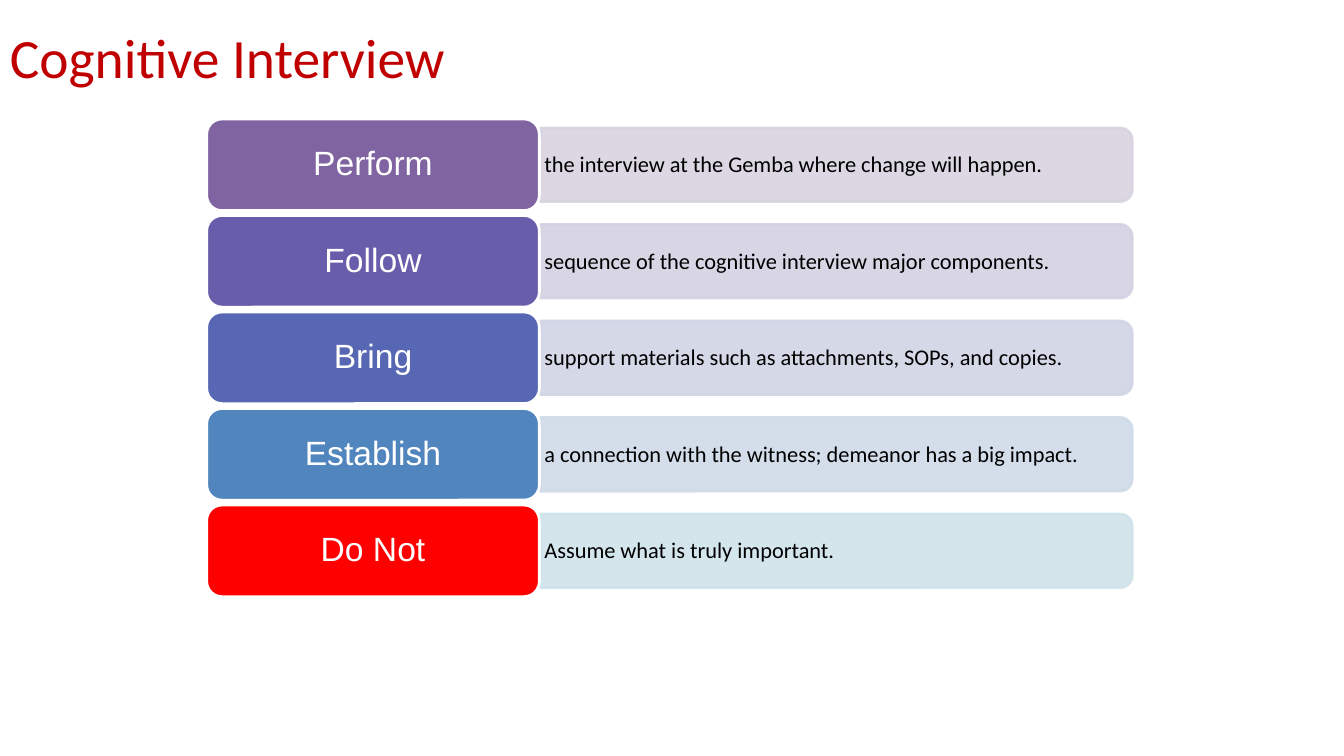
from lxml.etree import SubElement
from pptx import Presentation
from pptx.dml.color import RGBColor
from pptx.enum.shapes import MSO_SHAPE
from pptx.enum.text import MSO_ANCHOR, PP_ALIGN
from pptx.oxml.ns import qn
from pptx.util import Inches, Pt

COLORS = {
    "title": "C00000", "text": "000000", "white": "FFFFFF",
    "purple": "8064A2", "violet": "685DAB", "indigo": "5767B4",
    "blue": "5185BD", "red": "FF0000",
    "mauve": "D8D3E0", "lilac": "D4D2E3", "lavender": "D1D4E5",
    "mist": "D0DBE8", "aqua": "D0E3EA",
}

ROWS = [
    ("Perform", "the interview at the Gemba where change will happen.", "purple", "mauve"),
    ("Follow", "sequence of the cognitive interview major components.", "violet", "lilac"),
    ("Bring", "support materials such as attachments, SOPs, and copies.", "indigo", "lavender"),
    ("Establish", "a connection with the witness; demeanor has a big impact.", "blue", "mist"),
    ("Do Not", "Assume what is truly important.", "red", "aqua"),
]


class Board:
    def __init__(self, slide):
        self.slide = slide

    def color(self, name):
        return RGBColor.from_string(COLORS[name])

    def letter(self, shape, text, size, font, color, align=PP_ALIGN.LEFT):
        frame = shape.text_frame
        frame.word_wrap = True
        frame.vertical_anchor = MSO_ANCHOR.MIDDLE
        frame.text = text
        line = frame.paragraphs[0]
        line.alignment = align
        line.line_spacing = 0.9
        run = line.runs[0].font
        run.size = Pt(size)
        run.name = font
        run.color.rgb = self.color(color)

    def label(self, left, top, width, height, text, size, color, pad=(0.1, 0.05)):
        box = self.slide.shapes.add_textbox(
            Inches(left), Inches(top), Inches(width), Inches(height))
        frame = box.text_frame
        frame.margin_left = frame.margin_right = Inches(pad[0])
        frame.margin_top = frame.margin_bottom = Inches(pad[1])
        self.letter(box, text, size, "Calibri", color)

    def shape(self, kind, left, top, width, height, fill, edge):
        item = self.slide.shapes.add_shape(
            kind, Inches(left), Inches(top), Inches(width), Inches(height))
        item.shadow.inherit = False
        item.fill.solid()
        item.fill.fore_color.rgb = self.color(fill)
        item.line.color.rgb = self.color(edge)
        item.line.width = Pt(2)
        return item

    def bar(self, left, top, width, height, fill):
        shift = (width - height) / 2
        item = self.shape(MSO_SHAPE.ROUND_2_SAME_RECTANGLE,
                          left + shift, top - shift, height, width, fill, fill)
        item.rotation = 90
        for tint in item._element.spPr.iter(qn("a:srgbClr")):
            SubElement(tint, qn("a:alpha"), val="90000")

    def card(self, left, top, width, height, text, fill):
        item = self.shape(MSO_SHAPE.ROUNDED_RECTANGLE,
                          left, top, width, height, fill, "white")
        self.letter(item, text, 24, "Arial", "white", PP_ALIGN.CENTER)


def main():
    deck = Presentation()
    deck.slide_width = Inches(13.33)
    deck.slide_height = Inches(7.5)
    board = Board(deck.slides.add_slide(deck.slide_layouts[6]))
    board.label(0, 0.24, 12, 0.72, "Cognitive Interview", 39.6, "title")
    step = 3.83 / (len(ROWS) - 1)
    for index, (verb, detail, fill, pale) in enumerate(ROWS):
        top = 1.18 + index * step
        board.bar(5.36, top + 0.09, 5.87, 0.73, pale)
        board.label(5.36, top + 0.13, 5.83, 0.66, detail, 16, "text", (0.04, 0.02))
        board.card(2.05, top, 3.3, 0.91, verb, fill)
    deck.save("out.pptx")


if __name__ == "__main__":
    main()
